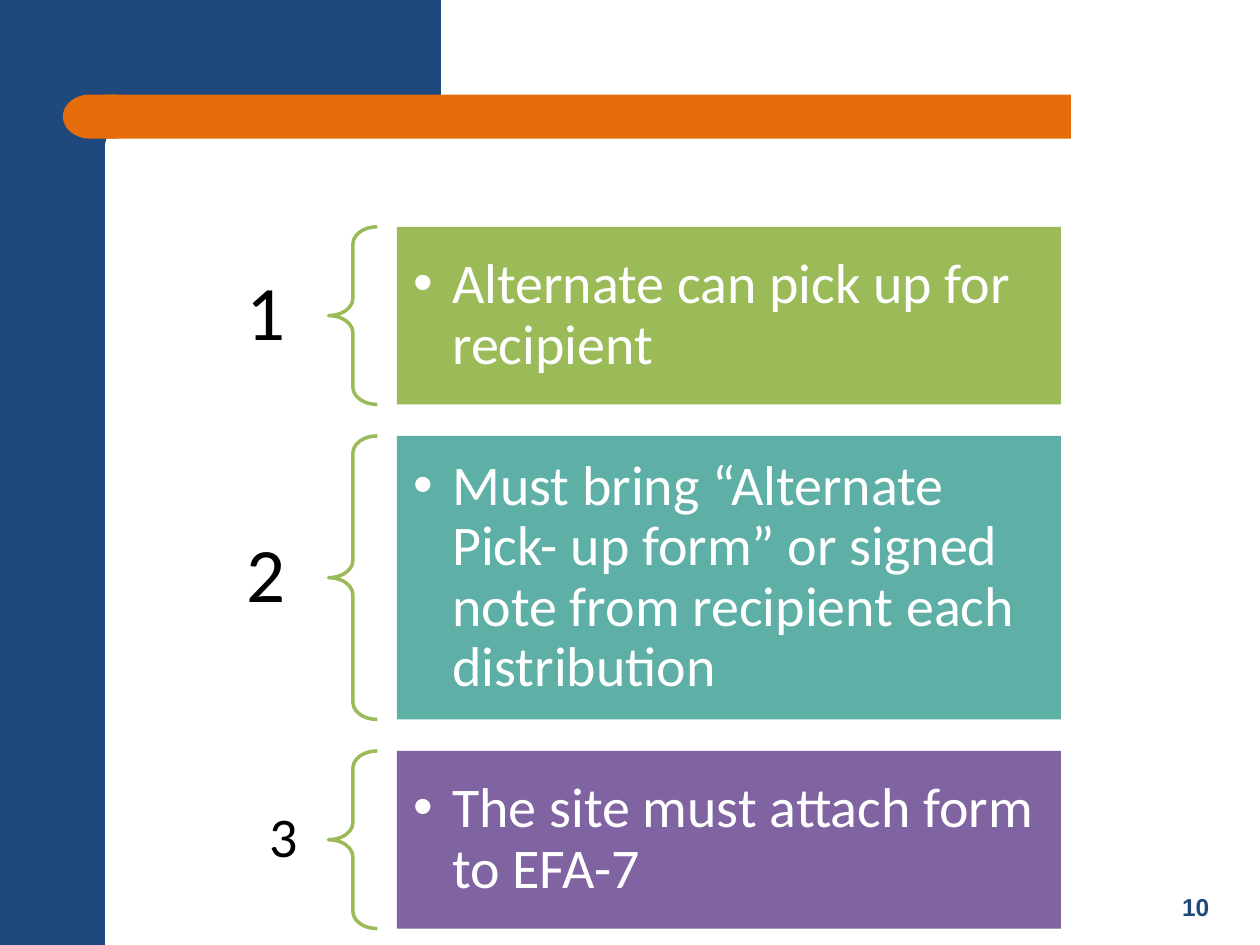
from lxml import etree
from pptx import Presentation
from pptx import util as u
from pptx.dml.color import RGBColor
from pptx.enum import shapes, text
from pptx.oxml.ns import qn

NAVY = RGBColor(0x1F, 0x49, 0x7D)
ORANGE = RGBColor(0xE4, 0x6C, 0x0A)
GREEN = RGBColor(0x9B, 0xBB, 0x59)
TEAL = RGBColor(0x5E, 0xAF, 0xA6)
PURPLE = RGBColor(0x80, 0x64, 0xA2)
WHITE = RGBColor(0xFF, 0xFF, 0xFF)
BLACK = RGBColor(0, 0, 0)

WIDTH, HEIGHT = 10, 7.5
SIDE = WIDTH / 12
GAP = 0.25
STEPS = [
    ("1", 44, "Alternate can pick up for recipient", GREEN, 1.41),
    ("2", 44, "Must bring “Alternate Pick- up form” or signed note from "
     "recipient each distribution", TEAL, 2.25),
    ("3", 32, "The site must attach form to EFA-7", PURPLE, 1.41),
]


def paint(sp, fill=None, line=None):
    sp.shadow.inherit = False
    if fill is None:
        sp.fill.background()
    else:
        sp.fill.solid()
        sp.fill.fore_color.rgb = fill
    if line is None:
        sp.line.fill.background()
    else:
        sp.line.color.rgb = line
        sp.line.width = u.Pt(2)
    return sp


def add_shape(s, kind, box, fill=None, line=None):
    sp = s.shapes.add_shape(kind, *(u.Inches(v) for v in box))
    return paint(sp, fill, line)


def write(sp, words, size, color, font="Calibri", bold=False, bullet=False,
          align=text.PP_ALIGN.LEFT, anchor=text.MSO_ANCHOR.MIDDLE,
          inset=(0.1, 0.05), spacing=0.9):
    tf = sp.text_frame
    tf.word_wrap = True
    tf.auto_size = text.MSO_AUTO_SIZE.NONE
    tf.vertical_anchor = anchor
    tf.margin_left = tf.margin_right = u.Inches(inset[0])
    tf.margin_top = tf.margin_bottom = u.Inches(inset[1])
    p = tf.paragraphs[0]
    p.alignment = align
    p.line_spacing = spacing
    if bullet:
        pPr = p._p.get_or_add_pPr()
        pPr.set("marL", str(u.Inches(0.31)))
        pPr.set("indent", str(-u.Inches(0.31)))
        etree.SubElement(pPr, qn("a:buFont")).set("typeface", "Arial")
        etree.SubElement(pPr, qn("a:buChar")).set("char", "•")
    r = p.add_run()
    r.text = words
    r.font.name, r.font.size, r.font.bold = font, u.Pt(size), bold
    r.font.color.rgb = color


def add_text(s, box, words, size, color, **fmt):
    sp = s.shapes.add_textbox(*(u.Inches(v) for v in box))
    write(sp, words, size, color, **fmt)


def add_frame(s, w, h):
    kind = shapes.MSO_SHAPE
    add_shape(s, kind.RECTANGLE, (0, 0, SIDE, h), NAVY)
    corner = [(3.5, 0), (3.5, 0.83), (1.11, 0.83), (1.03, 0.85), (0.93, 0.92),
              (0.86, 1.04), (0.83, 1.16), (0.83, 1.28), (0.5, 1.28)]
    outline = s.shapes.build_freeform(u.Inches(0.5), 0)
    outline.add_line_segments([(u.Inches(x), u.Inches(y)) for x, y in corner])
    paint(outline.convert_to_shape(), NAVY)
    add_shape(s, kind.RECTANGLE, (SIDE, h / 10, w * 0.85 - SIDE, 0.35), ORANGE)
    cap = add_shape(s, kind.FLOWCHART_DELAY, (w / 20, h / 10, 0.43, 0.35), ORANGE)
    cap._element.spPr.get_or_add_xfrm().set("flipH", "1")
    add_text(s, (9.17, 6.83, 0.64, 0.53), "10", 14, NAVY, font="Arial",
             bold=True, align=text.PP_ALIGN.CENTER,
             anchor=text.MSO_ANCHOR.BOTTOM, spacing=1)


def add_step(s, box, number, size, words, color):
    x, y, w, h = box
    label, brace, panel = w * 0.25, w * 0.05, w * 0.68
    add_text(s, (x, y, label, h), number, size, BLACK,
             align=text.PP_ALIGN.RIGHT,
             inset=(size * 0.0077, size * 0.0028))
    sp = add_shape(s, shapes.MSO_SHAPE.LEFT_BRACE, (x + label, y, brace, h), line=GREEN)
    sp.adjustments[0], sp.adjustments[1] = 0.35, 0.5
    sp = add_shape(s, shapes.MSO_SHAPE.RECTANGLE, (x + w - panel, y, panel, h), color)
    write(sp, words, 32, WHITE, bullet=True, inset=(0.13, 0.13))


def add_steps(s, x, y, w):
    for number, size, words, color, h in STEPS:
        add_step(s, (x, y, w, h), number, size, words, color)
        y += h + GAP


def main():
    prs = Presentation()
    prs.slide_width, prs.slide_height = u.Inches(WIDTH), u.Inches(HEIGHT)
    s = prs.slides.add_slide(prs.slide_layouts[6])
    add_frame(s, WIDTH, HEIGHT)
    add_steps(s, 0.67, 1.8, 7.75)
    prs.save("out.pptx")


if __name__ == "__main__":
    main()
